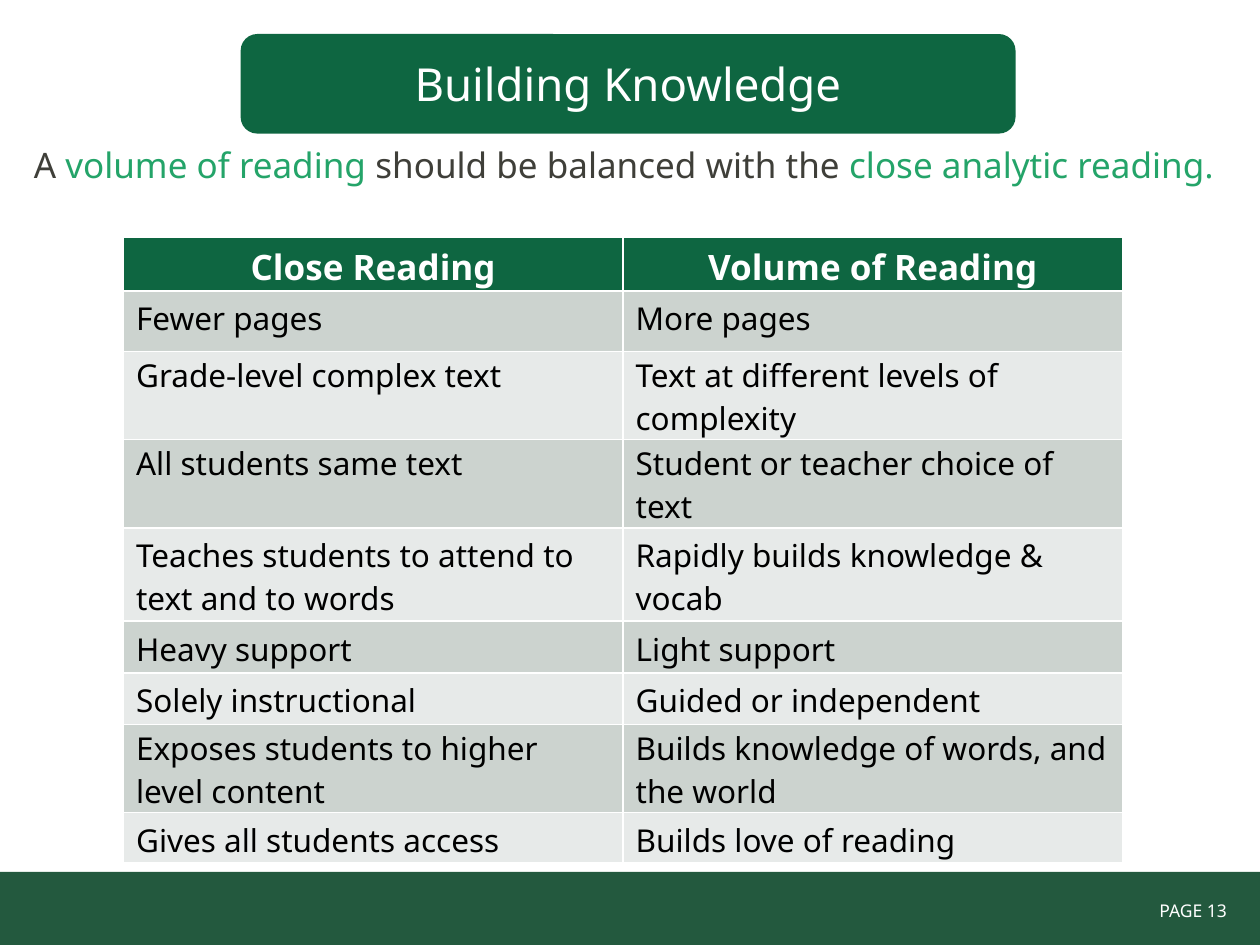
from pptx import Presentation
from pptx.dml.color import RGBColor
from pptx.enum.shapes import MSO_SHAPE
from pptx.enum.text import MSO_ANCHOR, PP_ALIGN
from pptx.util import Inches, Pt

RECTANGLE, ROUNDED = MSO_SHAPE.RECTANGLE, MSO_SHAPE.ROUNDED_RECTANGLE
LEFT, CENTER, RIGHT = PP_ALIGN.LEFT, PP_ALIGN.CENTER, PP_ALIGN.RIGHT
MIDDLE = MSO_ANCHOR.MIDDLE


class Theme:
    font = "Noto Sans"
    white = RGBColor.from_string("FFFFFF")
    black = RGBColor.from_string("000000")
    footer = RGBColor.from_string("23593E")
    green = RGBColor.from_string("0E6641")
    accent = RGBColor.from_string("24A469")
    ink = RGBColor.from_string("3F3F39")
    bands = (RGBColor.from_string("CCD3CF"), RGBColor.from_string("E7EAE9"))
    title_size, lead_size, body_size, page_size = 26, 20, 18, 10
    stop_size = 19


def write(para, pieces, align=LEFT, bold=False):
    para.alignment = align
    for text, size, color in pieces:
        span = para.add_run()
        span.text = text
        span.font.name = Theme.font
        span.font.size = Pt(size)
        span.font.bold = bold
        span.font.color.rgb = color


def add_panel(page, kind, left, top, width, height, color):
    panel = page.shapes.add_shape(
        kind, Inches(left), Inches(top), Inches(width), Inches(height))
    panel.shadow.inherit = False
    panel.fill.solid()
    panel.fill.fore_color.rgb = color
    panel.line.fill.background()
    return panel


deck = Presentation()
deck.slide_width, deck.slide_height = Inches(10), Inches(7.5)
page = deck.slides.add_slide(deck.slide_layouts[6])

add_panel(page, RECTANGLE, 0, 6.92, 10, 0.58, Theme.footer)
page_box = page.shapes.add_textbox(Inches(8.28), Inches(7.09), Inches(1.59), Inches(0.27))
page_box.text_frame.word_wrap = True
write(page_box.text_frame.paragraphs[0], [("PAGE 13 ", Theme.page_size, Theme.white)], RIGHT)

rows = [
    (0.43, "Close Reading", "Volume of Reading"),
    (0.48, "Fewer pages", "More pages"),
    (0.7, "Grade-level complex text", "Text at different levels of complexity"),
    (0.7, "All students same text", "Student or teacher choice of text"),
    (0.74, "Teaches students to attend to text and to words", "Rapidly builds knowledge & vocab"),
    (0.41, "Heavy support", "Light support"),
    (0.41, "Solely instructional", "Guided or independent"),
    (0.7, "Exposes students to higher level content", "Builds knowledge of words, and the world"),
    (0.4, "Gives all students access", "Builds love of reading"),
]
table_height = sum(height for height, *_ in rows)
table = page.shapes.add_table(
    len(rows), 2, Inches(0.98), Inches(1.88), Inches(7.93), Inches(table_height)).table
for index, (height, *texts) in enumerate(rows):
    table.rows[index].height = Inches(height)
    header = index == 0
    for column, text in enumerate(texts):
        cell = table.cell(index, column)
        cell.margin_top = Inches(0.02 if height == 0.7 else 0.05)
        cell.margin_bottom = 0
        cell.fill.solid()
        if header:
            cell.fill.fore_color.rgb = Theme.green
            piece = (text, Theme.lead_size, Theme.white)
        else:
            cell.fill.fore_color.rgb = Theme.bands[(index - 1) % 2]
            piece = (text, Theme.body_size, Theme.black)
        write(cell.text_frame.paragraphs[0], [piece], CENTER if header else LEFT, header)

lead_box = page.shapes.add_textbox(Inches(0.17), Inches(1.09), Inches(9.83), Inches(0.77))
lead_box.text_frame.word_wrap = True
write(lead_box.text_frame.paragraphs[0], [
    ("A ", Theme.lead_size, Theme.ink),
    ("volume of reading ", Theme.lead_size, Theme.accent),
    ("should be balanced with the ", Theme.lead_size, Theme.ink),
    ("close analytic reading", Theme.lead_size, Theme.accent),
    (".", Theme.stop_size, Theme.accent),
])

title = add_panel(page, ROUNDED, 1.91, 0.27, 6.15, 0.79, Theme.green)
title.text_frame.word_wrap = False
title.text_frame.vertical_anchor = MIDDLE
write(title.text_frame.paragraphs[0],
      [("Building Knowledge", Theme.title_size, Theme.white)], CENTER)

deck.save("out.pptx")
